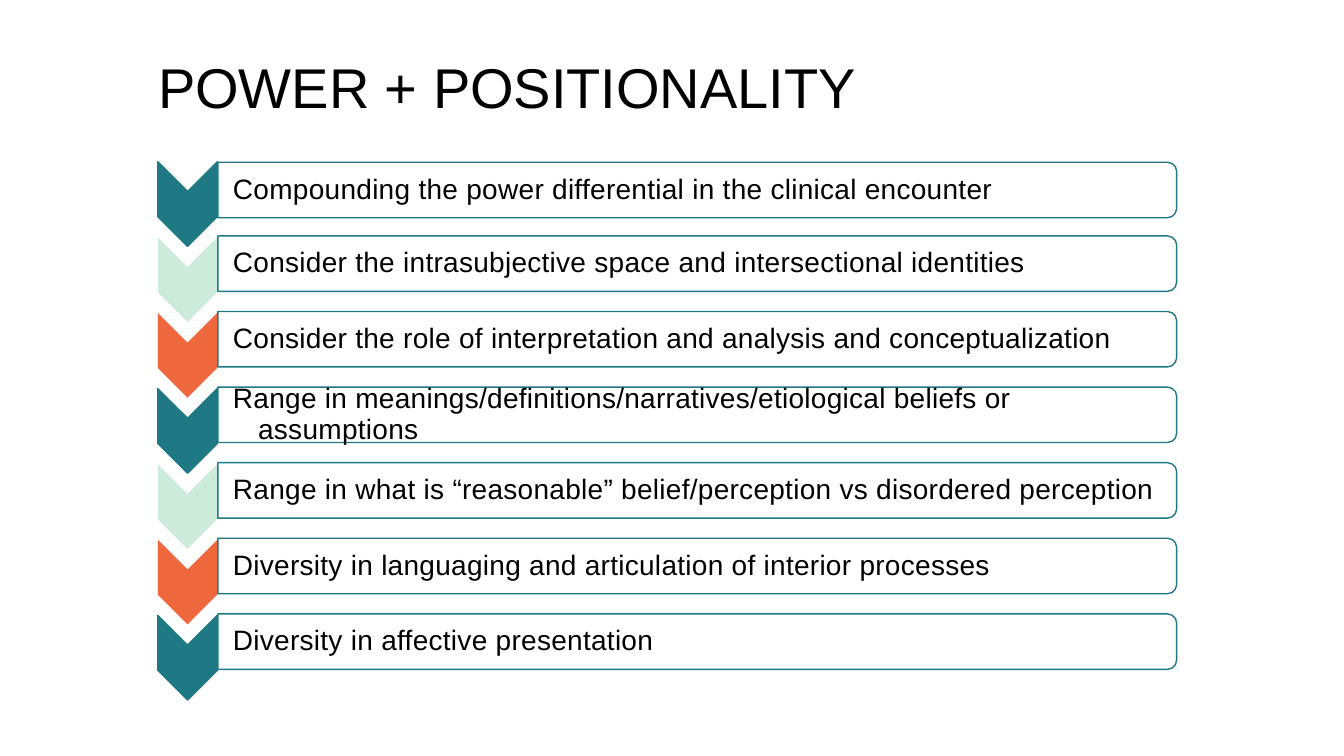
import pptx
import pptx.dml.color
import pptx.enum.shapes
import pptx.enum.text
import pptx.util

TEAL, MINT, ORANGE = "1F7985", "CDEBDA", "EF673D"
WHITE, BLACK = "FFFFFF", "000000"
CHEVRON = pptx.enum.shapes.MSO_SHAPE.CHEVRON
BAR = pptx.enum.shapes.MSO_SHAPE.ROUND_2_SAME_RECTANGLE
ROW_PITCH = 75
CHEVRON_STYLES = [(TEAL, TEAL), (MINT, None), (ORANGE, None)]
POINTS = [
    "Compounding the power differential in the clinical encounter",
    "Consider the intrasubjective space and intersectional identities",
    "Consider the role of interpretation and analysis and conceptualization",
    "Range in meanings/definitions/narratives/etiological beliefs or assumptions",
    "Range in what is “reasonable” belief/perception vs disordered perception",
    "Diversity in languaging and articulation of interior processes",
    "Diversity in affective presentation",
]


def px(length):
    return pptx.util.Emu(length * 9144)


def color(hex_string):
    return pptx.dml.color.RGBColor.from_string(hex_string)


class SlideBuilder:
    """Holds the text style and the current slide, and adds elements to it."""

    def __init__(self, slide, font_name, text_color):
        self.slide = slide
        self.font_name = font_name
        self.text_color = text_color

    def turned_shape(self, kind, left, top, width, height, fill, line=None):
        shift = (width - height) // 2
        shape = self.slide.shapes.add_shape(
            kind, px(left + shift), px(top - shift), px(height), px(width))
        shape.rotation = 90
        shape.shadow.inherit = False
        shape.fill.solid()
        shape.fill.fore_color.rgb = color(fill)
        if line:
            shape.line.color.rgb = color(line)
            shape.line.width = pptx.util.Pt(1)
        else:
            shape.line.fill.background()

    def text_box(self, text, left, top, width, height, size):
        shape = self.slide.shapes.add_textbox(px(left), px(top), px(width), px(height))
        shape.text_frame.word_wrap = True
        shape.text_frame.text = text
        font = shape.text_frame.paragraphs[0].runs[0].font
        font.name = self.font_name
        font.size = pptx.util.Pt(size)
        font.color.rgb = color(self.text_color)
        return shape.text_frame

    def title(self, text, left, top, width, height):
        text_frame = self.text_box(text, left, top, width, height, 40)
        text_frame.auto_size = pptx.enum.text.MSO_AUTO_SIZE.SHAPE_TO_FIT_TEXT

    def bar_text(self, text, left, top, width, height):
        text_frame = self.text_box(text, left, top, width, height, 20)
        text_frame.vertical_anchor = pptx.enum.text.MSO_ANCHOR.MIDDLE
        text_frame.margin_left = px(16)
        text_frame.margin_top = text_frame.margin_right = text_frame.margin_bottom = px(1)
        paragraph = text_frame.paragraphs[0]
        paragraph.line_spacing = 0.9
        properties = paragraph._p.get_or_add_pPr()
        properties.set("marL", str(px(25)))
        properties.set("indent", str(px(-25)))
        paragraph.runs[0]._r.get_or_add_rPr().set("spc", "20")


def main():
    presentation = pptx.Presentation()
    presentation.slide_width = px(1333)
    presentation.slide_height = px(750)
    slide = presentation.slides.add_slide(presentation.slide_layouts[6])
    builder = SlideBuilder(slide, "Arial", BLACK)

    for row, point in enumerate(POINTS):
        offset = row * ROW_PITCH
        bar_top = 159 + offset + (2 if row == 0 else 0)
        fill, line = CHEVRON_STYLES[row % len(CHEVRON_STYLES)]
        builder.turned_shape(CHEVRON, 157, 160 + offset, 59, 84, fill, line)
        builder.turned_shape(BAR, 216, bar_top, 951, 55, WHITE, TEAL)
        builder.bar_text(point, 215, bar_top + 3, 949, 49)

    builder.title("POWER + POSITIONALITY", 147, 47, 1030, 77)
    presentation.save("out.pptx")


if __name__ == "__main__":
    main()
